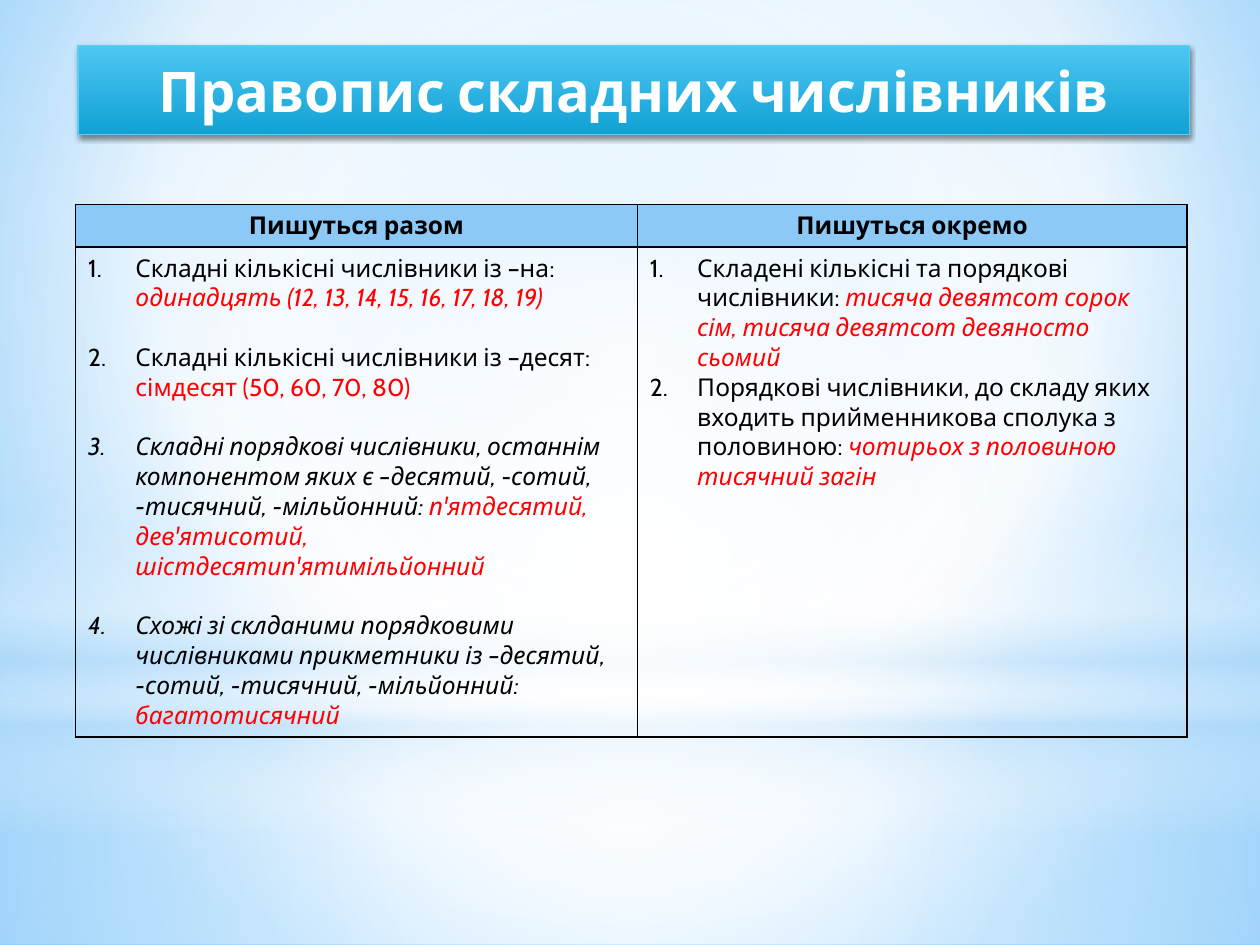
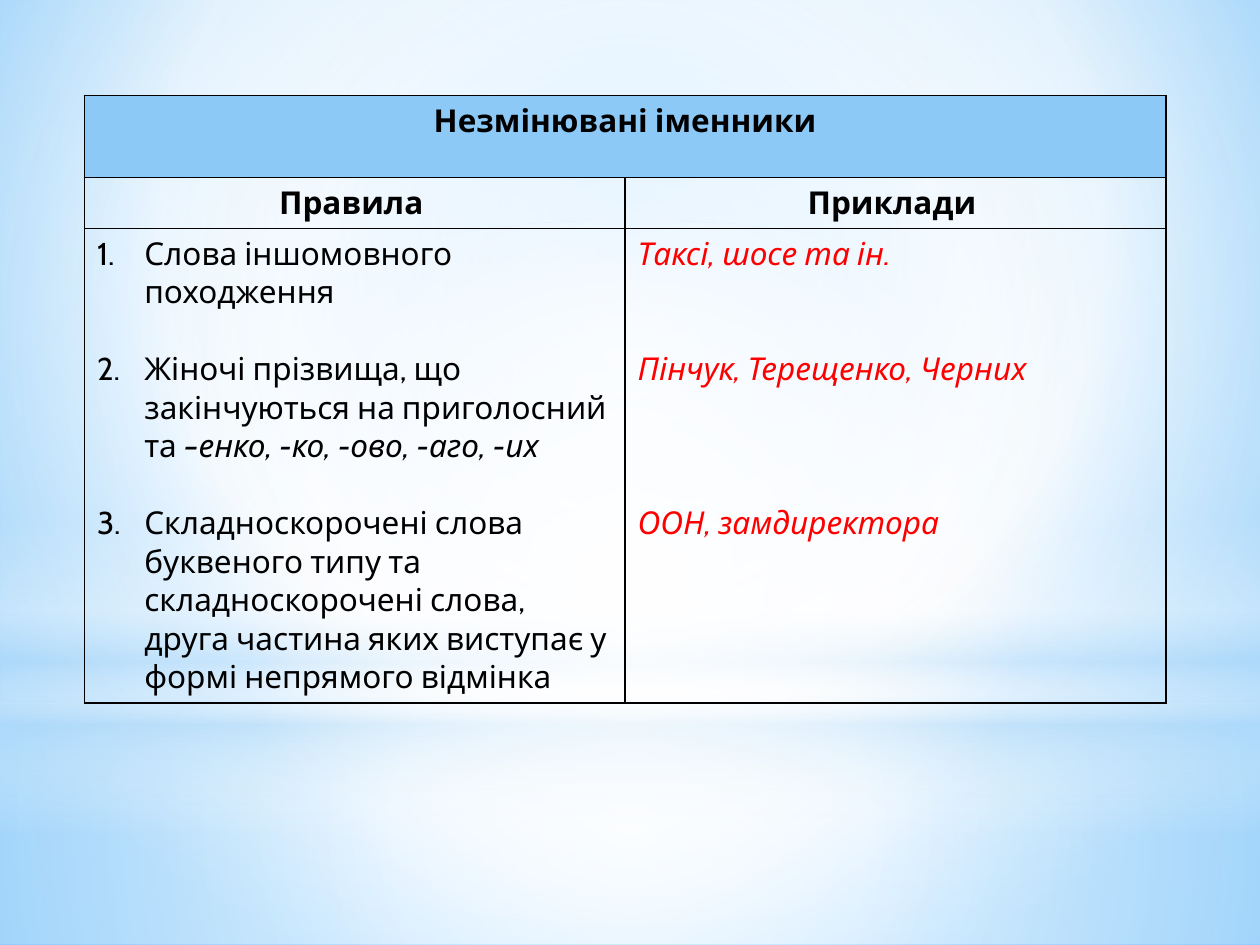
from dataclasses import dataclass
from typing import NamedTuple, Optional

from pptx import Presentation
from pptx.dml.color import RGBColor
from pptx.enum.shapes import MSO_SHAPE
from pptx.enum.text import MSO_ANCHOR, MSO_AUTO_SIZE, PP_ALIGN
from pptx.oxml import parse_xml
from pptx.oxml.ns import nsdecls, qn
from pptx.util import Pt

FONT = "Cabin"
BLACK, WHITE, RED = "000000", "FFFFFF", "FF0000"
PALE, HEADER = "B4DCFA", "8CC9F7"
CENTRE = (50, 50, 50, 50)


class Stop(NamedTuple):
    pos: int
    color: str
    alpha: int = 100


class Run(NamedTuple):
    text: str
    color: str = BLACK
    italic: bool = False
    bold: bool = False


@dataclass
class Para:
    runs: list[Run]
    gap_lines: int = 0
    numbered: bool = False
    align: PP_ALIGN = PP_ALIGN.LEFT


@dataclass
class Cell:
    paras: list[Para]
    fill: Optional[str] = None


@dataclass
class Band:
    top: float
    height: float
    stops: list[Stop]
    shape: MSO_SHAPE = MSO_SHAPE.RECTANGLE
    focus: Optional[tuple] = CENTRE


@dataclass
class Grid:
    left: float
    top: float
    cols: list[float]
    rows: list[float]
    size: float
    line: float
    cells: list[list[Cell]]


BACKGROUND = [Stop(0, "9ED5FF"), Stop(60, WHITE), Stop(100, "5BB9FF")]
BANDS = [
    Band(402, 138, [Stop(0, WHITE, 91), Stop(37, WHITE, 76), Stop(100, PALE, 79)]),
    Band(0, 402, [Stop(0, WHITE, 89), Stop(48, WHITE, 62), Stop(100, PALE, 79)]),
    Band(297, 180, [Stop(0, WHITE, 0), Stop(29, WHITE, 30), Stop(45, PALE, 40),
                    Stop(55, WHITE, 26), Stop(65, PALE, 60), Stop(100, WHITE, 0)],
         focus=None),
    Band(126, 402, [Stop(0, WHITE), Stop(56, WHITE, 0)], MSO_SHAPE.OVAL),
]


def rgb(color: str) -> RGBColor:
    return RGBColor.from_string(color)


def set_gradient(fill, parent, stops: list[Stop], focus: Optional[tuple] = None) -> None:
    """Fill with a vertical gradient, or a circular one around focus."""
    gs = "".join(
        f'<a:gs pos="{st.pos * 1000}"><a:srgbClr val="{rgb(st.color)}">'
        f'<a:alpha val="{st.alpha * 1000}"/></a:srgbClr></a:gs>' for st in stops)
    direction = '<a:lin ang="5400000" scaled="0"/>'
    if focus:
        sides = " ".join(f'{k}="{v * 1000}"' for k, v in zip("ltrb", focus))
        direction = f'<a:path path="circle"><a:fillToRect {sides}/></a:path>'
    fill.solid()
    solid = parent.find(qn("a:solidFill"))
    parent.replace(solid, parse_xml(
        f'<a:gradFill {nsdecls("a")} rotWithShape="1"><a:gsLst>{gs}</a:gsLst>'
        f'{direction}</a:gradFill>'))


def build_master(prs, s) -> None:
    """Put the background and its light bands on the slide master."""
    master = prs.slide_master
    fill = master.background.fill
    fill.solid()
    set_gradient(fill, master.element.xpath(".//p:bgPr")[0], BACKGROUND, (20, 10, 20, 60))
    tree = master.shapes.element
    for i, band in enumerate(BANDS):
        sp = s.shapes.add_shape(band.shape, 0, Pt(band.top), prs.slide_width, Pt(band.height))
        sp.shadow.inherit = False
        sp.line.fill.background()
        set_gradient(sp.fill, sp.element.spPr, band.stops, band.focus)
        sp.element.xpath(".//p:cNvPr")[0].set("id", str(100 + i))
        tree.insert(2 + i, sp.element)


def add_run(p, run: Run, size: float) -> None:
    r = p.add_run()
    r.text = run.text
    f = r.font
    f.name, f.size, f.bold, f.italic = FONT, Pt(size), run.bold, run.italic
    f.color.rgb = rgb(run.color)


def set_title(s, text: str) -> None:
    """Turn the title placeholder into the glossy rounded title bar."""
    sp = s.shapes.title
    sp.left, sp.top, sp.width, sp.height = Pt(44.64), Pt(25.9), Pt(635), Pt(51.1)
    spPr = sp.element.spPr
    spPr.insert(1, parse_xml(
        f'<a:prstGeom {nsdecls("a")} prst="roundRect"><a:avLst/></a:prstGeom>'))
    set_gradient(sp.fill, spPr, [Stop(0, "4EC7F2"), Stop(100, "11A1D4")])
    sp.line.color.rgb = rgb("5ECCF3")
    sp.line.width = Pt(0.75)
    spPr.append(parse_xml(
        f'<a:effectLst {nsdecls("a")}><a:outerShdw blurRad="{Pt(3.1)}" dist="{Pt(1.8)}" '
        f'dir="5400000" rotWithShape="0"><a:srgbClr val="{rgb(BLACK)}">'
        '<a:alpha val="45000"/></a:srgbClr></a:outerShdw></a:effectLst>'))
    tf = sp.text_frame
    tf.auto_size = MSO_AUTO_SIZE.NONE
    tf.vertical_anchor = MSO_ANCHOR.MIDDLE
    p = tf.paragraphs[0]
    p.alignment = PP_ALIGN.CENTER
    add_run(p, Run(text, WHITE, bold=True), 32)


def set_borders(cell) -> None:
    tcPr = cell._tc.get_or_add_tcPr()
    for i, side in enumerate("LRTB"):
        tcPr.insert(i, parse_xml(
            f'<a:ln{side} {nsdecls("a")} w="{Pt(1)}"><a:solidFill>'
            f'<a:srgbClr val="{rgb(BLACK)}"/></a:solidFill></a:ln{side}>'))


def fill_cell(cell, content: Cell, grid: Grid) -> None:
    if content.fill:
        cell.fill.solid()
        cell.fill.fore_color.rgb = rgb(content.fill)
    else:
        cell.fill.background()
    set_borders(cell)
    tf = cell.text_frame
    for i, para in enumerate(content.paras):
        p = tf.add_paragraph() if i else tf.paragraphs[0]
        p.alignment = para.align
        p.space_before = Pt(para.gap_lines * grid.line)
        if para.numbered:
            pPr = p._p.get_or_add_pPr()
            pPr.set("marL", str(Pt(27)))
            pPr.set("indent", str(-Pt(27)))
            pPr.append(parse_xml(f'<a:buAutoNum {nsdecls("a")} type="arabicPeriod"/>'))
        for run in para.runs:
            add_run(p, run, grid.size)


def add_grid(s, grid: Grid):
    frame = s.shapes.add_table(len(grid.rows), len(grid.cols), Pt(grid.left), Pt(grid.top),
                               Pt(sum(grid.cols)), Pt(sum(grid.rows)))
    table = frame.table
    table.first_row = table.horz_banding = False
    for col, width in zip(table.columns, grid.cols):
        col.width = Pt(width)
    for row, height, contents in zip(table.rows, grid.rows, grid.cells):
        row.height = Pt(height)
        for cell, content in zip(row.cells, contents):
            fill_cell(cell, content, grid)
    return table


def heading(text: str, fill: Optional[str] = None) -> Cell:
    return Cell([Para([Run(text, bold=True)], align=PP_ALIGN.CENTER)], fill)


def numbered(items: list[list[Run]], gap_lines: int) -> Cell:
    return Cell([Para(runs, gap_lines if i else 0, True) for i, runs in enumerate(items)])


# Compound numerals
NUMERALS = Grid(
    43.2, 116.9, [321, 314], [24, 280], 14, 17,
    [[heading("Пишуться разом", HEADER), heading("Пишуться окремо", HEADER)],
     [numbered([
         [Run("Складні кількісні числівники із –на: "),
          Run("одинадцять (12, 13, 14, 15, 16, 17, 18, 19)", RED, True)],
         [Run("Складні кількісні числівники із –десят: "),
          Run("сімдесят (50, 60, 70, 80)", RED)],
         [Run("Складні порядкові числівники, останнім компонентом яких є –десятий, "
              "-сотий, -тисячний, -мільйонний: ", italic=True),
          Run("п'ятдесятий, дев'ятисотий, шістдесятип'ятимільйонний", RED, True)],
         [Run("Схожі зі склданими порядковими числівниками прикметники із –десятий, "
              "-сотий, -тисячний, -мільйонний: ", italic=True),
          Run("багатотисячний", RED, True)],
     ], 1),
      numbered([
          [Run("Складені кількісні та порядкові числівники: "),
           Run("тисяча девятсот сорок сім, тисяча девятсот девяносто сьомий", RED, True)],
          [Run("Порядкові числівники, до складу яких входить прийменникова сполука "
               "з половиною: "),
           Run("чотирьох з половиною тисячний загін", RED, True)],
      ], 0)]])

# Indeclinable nouns
NOUNS = Grid(
    48.24, 54.7, [309, 309], [46.8, 28.6, 266.4], 18, 22,
    [[heading("Незмінювані іменники", HEADER), Cell([], HEADER)],
     [heading("Правила "), heading("Приклади ")],
     [numbered([
         [Run("Слова іншомовного походження")],
         [Run("Жіночі прізвища, що закінчуються на приголосний та "),
          Run("–енко, -ко, -ово, -аго, -их", italic=True)],
         [Run("Складноскорочені слова буквеного типу та складноскорочені слова, "
              "друга частина яких виступає у формі непрямого відмінка")],
     ], 1),
      Cell([Para([Run(text, RED, True)], gap) for text, gap in (
          ("Таксі, шосе та ін.", 0),
          ("Пінчук, Терещенко, Черних", 2),
          ("ООН, замдиректора", 3))])]])


def main() -> None:
    prs = Presentation()
    prs.slide_width, prs.slide_height = Pt(720), Pt(540)
    title_only, blank = prs.slide_layouts[5], prs.slide_layouts[6]

    # Slide 1
    s = prs.slides.add_slide(title_only)
    build_master(prs, s)
    set_title(s, "Правопис складних числівників")
    add_grid(s, NUMERALS)

    # Slide 2
    s = prs.slides.add_slide(blank)
    table = add_grid(s, NOUNS)
    table.cell(0, 0).merge(table.cell(0, 1))

    prs.save("out.pptx")


if __name__ == "__main__":
    main()
